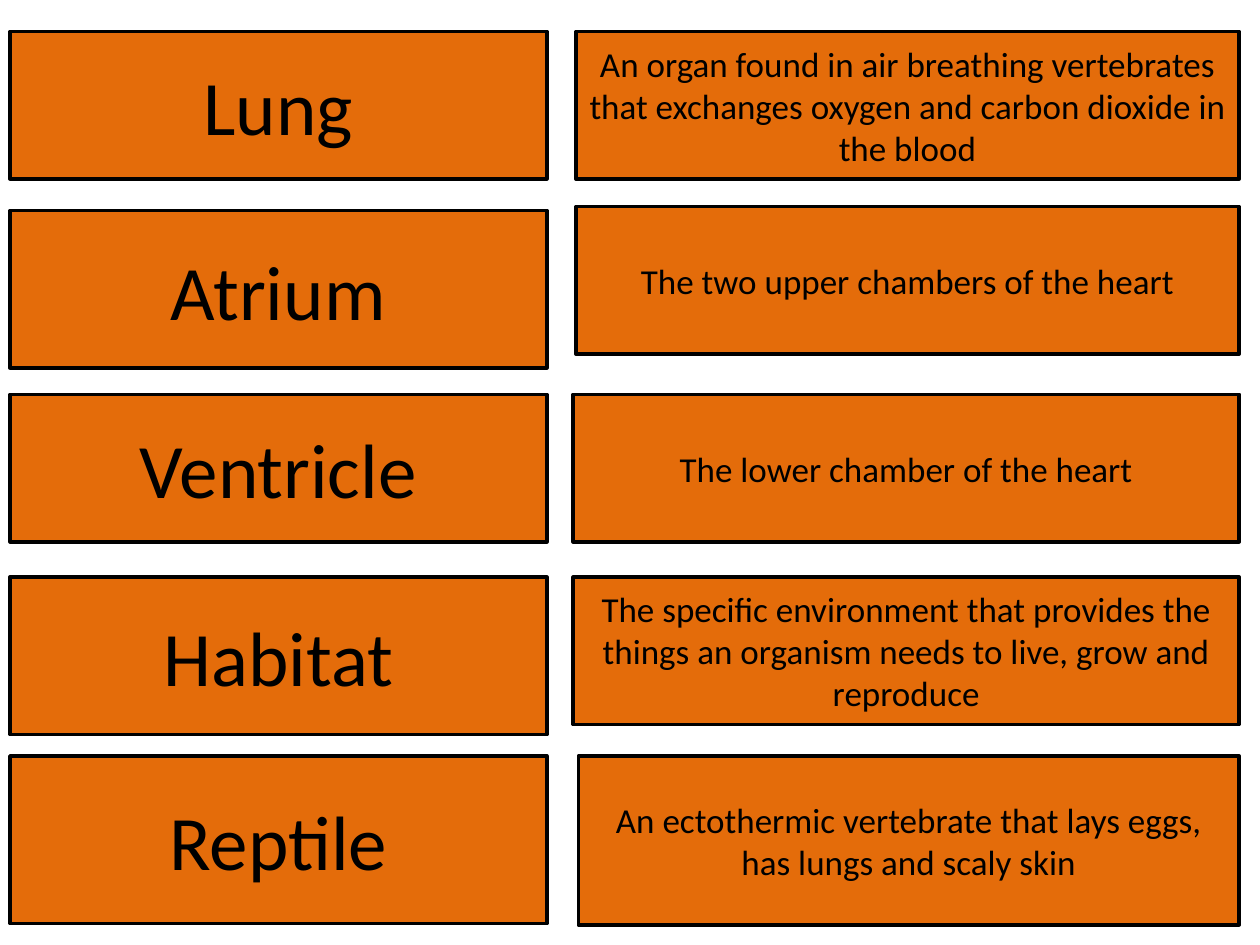
from pptx import Presentation
from pptx.dml.color import RGBColor
from pptx.enum.shapes import MSO_SHAPE
from pptx.enum.text import MSO_ANCHOR, PP_ALIGN
from pptx.util import Inches, Pt

PROCESS = MSO_SHAPE.FLOWCHART_PROCESS
MIDDLE = MSO_ANCHOR.MIDDLE
CENTER = PP_ALIGN.CENTER

ORANGE = RGBColor(0xE4, 0x6C, 0x0A)
BLACK = RGBColor(0, 0, 0)

COLUMNS, ROWS = 100, 75
TERM_LEFT, TERM_RIGHT = 0.8, 43.4
DEFINITION_RIGHT = 98.35
BLANK_LAYOUT = 6

# term, top, height, definition, left, top, height
VOCABULARY = [
    ("Lung", 2.5, 11.7,
     "An organ found in air breathing vertebrates that exchanges oxygen "
     "and carbon dioxide in the blood", 45.7, 2.5, 11.7),
    ("Atrium", 16.7, 12.5,
     "The two upper chambers of the heart", 45.7, 16.4, 11.7),
    ("Ventricle", 31.3, 11.7,
     "The lower chamber of the heart", 45.5, 31.3, 11.7),
    ("Habitat", 45.8, 12.5,
     "The specific environment that provides the things an organism needs "
     "to live, grow and reproduce", 45.5, 45.8, 11.7),
    ("Reptile", 60, 13.3,
     "An ectothermic vertebrate that lays eggs, has lungs and scaly skin",
     45.9, 60, 13.4),
]


class CardSheet:
    font_name = "Calibri"
    term_size = Pt(44)
    definition_size = Pt(20)
    border = Pt(2)

    def __init__(self, deck):
        self.slide = deck.slides.add_slide(deck.slide_layouts[BLANK_LAYOUT])
        self.column = deck.slide_width / COLUMNS
        self.row = deck.slide_height / ROWS

    def card(self, text, left, right, top, height, size):
        card = self.slide.shapes.add_shape(
            PROCESS, round(left * self.column), round(top * self.row),
            round((right - left) * self.column), round(height * self.row))
        card.shadow.inherit = False
        card.fill.solid()
        card.fill.fore_color.rgb = ORANGE
        card.line.color.rgb = BLACK
        card.line.width = self.border
        frame = card.text_frame
        frame.text = text
        frame.word_wrap = True
        frame.vertical_anchor = MIDDLE
        paragraph = frame.paragraphs[0]
        paragraph.alignment = CENTER
        font = paragraph.runs[0].font
        font.name = self.font_name
        font.size = size
        font.color.rgb = BLACK

    def term(self, text, top, height):
        self.card(text, TERM_LEFT, TERM_RIGHT, top, height, self.term_size)

    def definition(self, text, left, top, height):
        self.card(text, left, DEFINITION_RIGHT, top, height,
                  self.definition_size)


def main():
    deck = Presentation()
    deck.slide_width = Inches(10)
    deck.slide_height = Inches(7.5)
    sheet = CardSheet(deck)
    for term, term_top, term_height, meaning, left, top, height in VOCABULARY:
        sheet.term(term, term_top, term_height)
        sheet.definition(meaning, left, top, height)
    deck.save("out.pptx")


if __name__ == "__main__":
    main()
